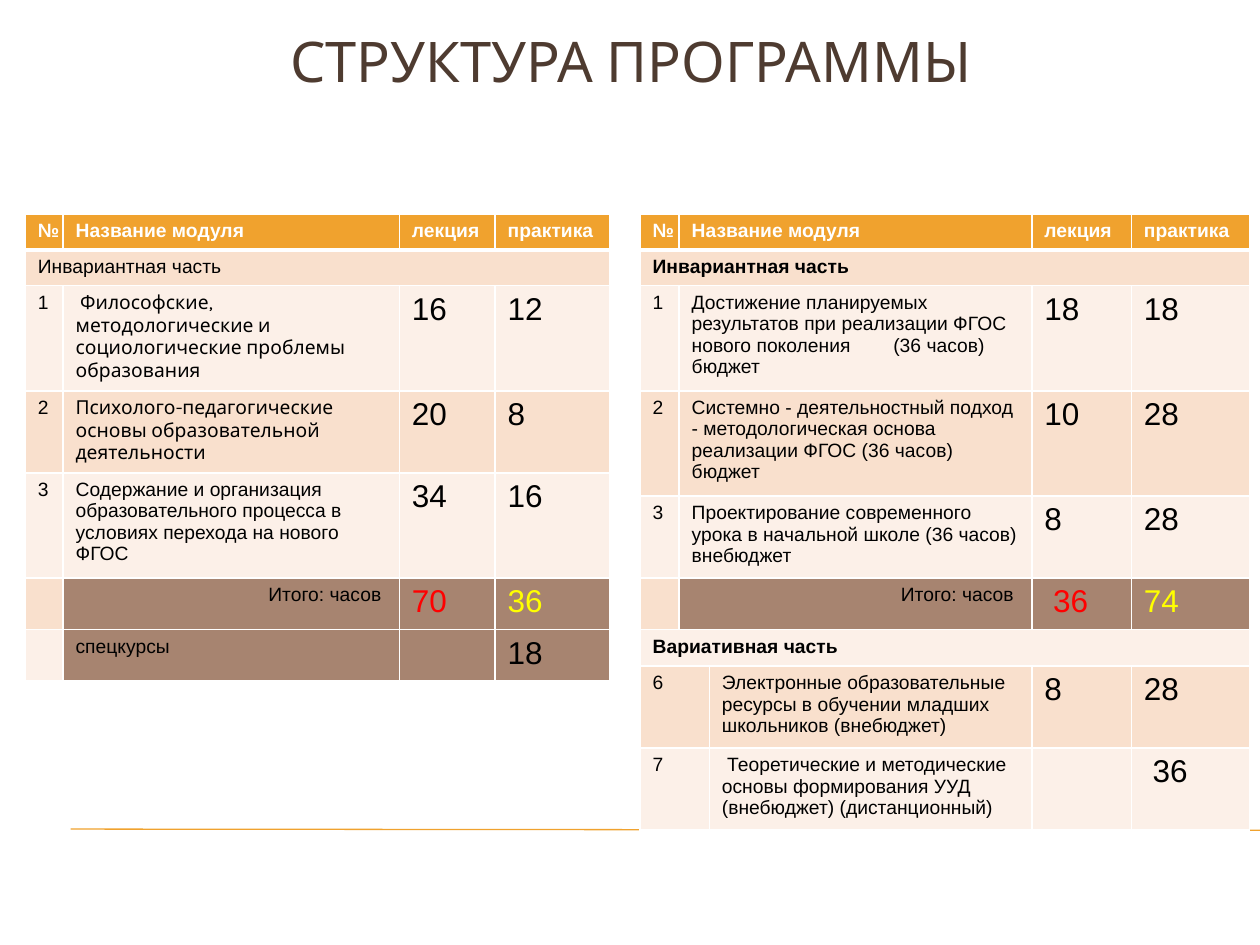
from dataclasses import dataclass

from lxml.etree import SubElement
from pptx import Presentation
from pptx.dml.color import RGBColor
from pptx.enum.shapes import MSO_CONNECTOR
from pptx.enum.text import MSO_ANCHOR, PP_ALIGN
from pptx.oxml.ns import qn
from pptx.util import Inches, Pt


@dataclass(frozen=True)
class Theme:
    """Colours, fonts and type sizes of the slide."""
    gold: str = "F0A22E"
    peach: str = "F9E0CD"
    cream: str = "FCF0E8"
    brown: str = "A78470"
    title: str = "4E3B30"
    white: str = "FFFFFF"
    black: str = "000000"
    red: str = "FF0000"
    yellow: str = "FFFF00"
    sans: str = "Arial"
    karla: str = "Karla"
    small: int = 11
    large: int = 18
    head: int = 32


T = Theme()


@dataclass(frozen=True)
class Cell:
    """Text of one cell with its format."""
    text: str = ""
    span: int = 1
    size: int = T.small
    color: str = T.black
    bold: bool = False
    font: str = T.sans
    align: PP_ALIGN = PP_ALIGN.LEFT
    tab: float = 0


@dataclass(frozen=True)
class Row:
    """One table row with its height."""
    height: float
    cells: list[Cell]
    dark: bool = False


@dataclass(frozen=True)
class Grid:
    """One table with its place and columns."""
    left: float
    top: float
    cols: list[float]
    rows: list[Row]


def write(frame, text: str, *, size: int, color: str, font: str, bold: bool = False,
          align: PP_ALIGN = PP_ALIGN.LEFT, tab: float = 0) -> None:
    """Put one formatted paragraph into a text frame."""
    para = frame.paragraphs[0]
    para.alignment = align
    if tab:
        stops = SubElement(para._p.get_or_add_pPr(), qn("a:tabLst"))
        SubElement(stops, qn("a:tab"), pos=str(Inches(tab)), algn="l")
    if not text:
        para.font.size = Pt(size)
        return
    run = para.add_run()
    run.text = text
    run.font.size, run.font.name, run.font.bold = Pt(size), font, bold
    run.font.color.rgb = RGBColor.from_string(color)


def edge(cell, top: float, bottom: float) -> None:
    """Draw the white borders of a cell."""
    props = cell._tc.get_or_add_tcPr()
    for side, width in zip("LRTB", (1, 1, top, bottom)):
        line = SubElement(props, qn(f"a:ln{side}"), w=str(Pt(width)))
        fill = SubElement(line, qn("a:solidFill"))
        SubElement(fill, qn("a:srgbClr"), val=T.white)


def shade(index: int, col: int, dark: bool) -> str:
    """Choose the fill of a cell from its place."""
    if index == 0:
        return T.gold
    if dark and col > 0:
        return T.brown
    return T.peach if index % 2 else T.cream


def draw(slide, grid: Grid) -> None:
    """Add one table to the slide."""
    width, height = sum(grid.cols), sum(row.height for row in grid.rows)
    table = slide.shapes.add_table(len(grid.rows), len(grid.cols), Inches(grid.left),
                                   Inches(grid.top), Inches(width), Inches(height)).table
    for col, size in zip(table.columns, grid.cols):
        col.width = Inches(size)
    for index, row in enumerate(grid.rows):
        table.rows[index].height = Inches(row.height)
        col = 0
        for item in row.cells:
            first, last = table.cell(index, col), table.cell(index, col + item.span - 1)
            for place in range(col, col + item.span):
                cell = table.cell(index, place)
                edge(cell, 3 if index == 1 else 1, 3 if index == 0 else 1)
                cell.fill.solid()
                cell.fill.fore_color.rgb = RGBColor.from_string(shade(index, col, row.dark))
            if item.span > 1:
                first.merge(last)
            write(first.text_frame, item.text, size=item.size, color=item.color,
                  font=item.font, bold=item.bold, align=item.align, tab=item.tab)
            col += item.span


def header(span: int = 1) -> Row:
    """Make the header row."""
    names = [("№", 1), ("Название модуля", span), ("лекция", 1), ("практика", 1)]
    return Row(0.28, [Cell(name, wide, color=T.white, bold=True) for name, wide in names])


def part(text: str, span: int, height: float = 0.28, bold: bool = False) -> Row:
    """Make a row that names a part of the programme."""
    return Row(height, [Cell(text, span, bold=bold)])


def unit(num: str, name: str, talk: str, work: str, *, height: float = 0.65,
         spans: tuple[int, int] = (1, 1), font: str = T.sans, tab: float = 0) -> Row:
    """Make the row of one module."""
    return Row(height, [Cell(num, spans[0]), Cell(name, spans[1], font=font, tab=tab),
                        Cell(talk, size=T.large), Cell(work, size=T.large)])


def total(talk: str, work: str, span: int = 1) -> Row:
    """Make the row of summed hours."""
    return Row(0.41, [Cell(), Cell("Итого: часов ", span, align=PP_ALIGN.RIGHT),
                      Cell(talk, size=T.large, color=T.red),
                      Cell(work, size=T.large, color=T.yellow)], dark=True)


WIDE, LATE = (1, 2), (2, 1)
RIGHT = Grid(5.08, 1.7, [0.31, 0.2, 2.56, 0.79, 0.94], [
    header(2),
    part("Инвариантная часть", 5, bold=True),
    unit("1", "Достижение планируемых результатов при реализации ФГОС нового поколения\t"
         "(36 часов) бюджет", "18", "18", spans=WIDE, tab=1.6),
    unit("2", "Системно - деятельностный подход - методологическая основа реализации ФГОС "
         "(36 часов) бюджет", "10", "28", spans=WIDE),
    unit("3", "Проектирование современного урока в начальной школе (36 часов) внебюджет",
         "8", "28", spans=WIDE),
    total(" 36", "74", 2),
    part("Вариативная часть", 5, 0.29, bold=True),
    unit("6", "Электронные образовательные ресурсы в обучении младших школьников (внебюджет)",
         "8", "28", spans=LATE),
    unit("7", " Теоретические и методические основы формирования УУД (внебюджет) "
         "(дистанционный)", "", " 36", spans=LATE),
])
LEFT = Grid(0.2, 1.7, [0.3, 2.67, 0.76, 0.91], [
    header(),
    part("Инвариантная часть", 4),
    unit("1", " Философские, методологические и социологические проблемы образования",
         "16", "12", font=T.karla),
    unit("2", "Психолого-педагогические основы образовательной деятельности",
         "20", "8", height=0.47, font=T.karla),
    unit("3", "Содержание и организация образовательного процесса в условиях перехода "
         "на нового ФГОС", "34", "16"),
    total("70", "36"),
    Row(0.41, [Cell(), Cell("спецкурсы"), Cell(), Cell("18", size=T.large)], dark=True),
])


def main() -> None:
    """Build and save the slide."""
    deck = Presentation()
    deck.slide_width, deck.slide_height = Inches(10), Inches(7.5)
    slide = deck.slides.add_slide(deck.slide_layouts[6])
    rule = slide.shapes.add_connector(MSO_CONNECTOR.STRAIGHT, Inches(0.56), Inches(6.58),
                                      Inches(10), Inches(6.59))
    rule.line.color.rgb = RGBColor.from_string(T.gold)
    rule.line.width = Pt(0.75)
    SubElement(rule._element.spPr, qn("a:effectLst"))
    frame = slide.shapes.add_textbox(Inches(0.51), Inches(0.13), Inches(9),
                                     Inches(0.69)).text_frame
    frame.word_wrap = True
    frame.vertical_anchor = MSO_ANCHOR.MIDDLE
    write(frame, "СТРУКТУРА ПРОГРАММЫ", size=T.head, color=T.title, font=T.karla,
          align=PP_ALIGN.CENTER)
    for grid in (RIGHT, LEFT):
        draw(slide, grid)
    deck.save("out.pptx")


if __name__ == "__main__":
    main()
